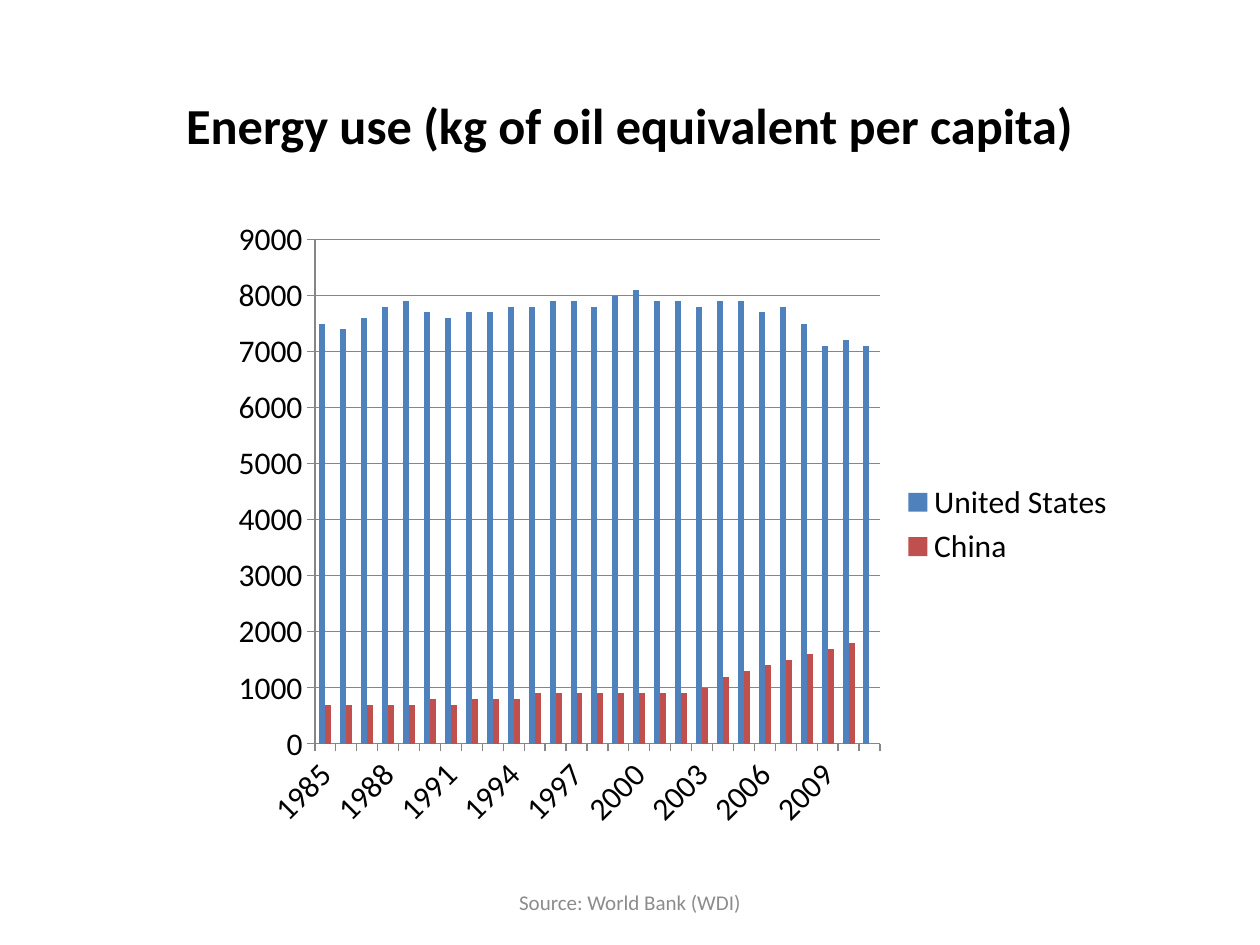
from dataclasses import dataclass

from pptx import Presentation
from pptx import util as u
from pptx.chart.data import CategoryChartData
from pptx.dml.color import RGBColor
from pptx.enum import chart as charts
from pptx.enum import text


@dataclass(frozen=True)
class Theme:
    font: str = "Calibri"
    ink: str = "000000"
    muted: str = "8C8C8C"
    axis: str = "868686"
    series: tuple = ("4F81BD", "C0504D")
    title_size: float = 28.8
    chart_size: float = 18
    source_size: float = 12


def apply(target, formats):
    for name, value in formats.items():
        setattr(target, name, value)


class SlideBuilder:
    def __init__(self, deck, theme):
        self.deck = deck
        self.theme = theme
        self.slide = deck.slides.add_slide(deck.slide_layouts[5])

    def box(self, left, top, width, height):
        across, down = self.deck.slide_width, self.deck.slide_height
        return (int(left * across), int(top * down),
                int(width * across), int(height * down))

    def style_font(self, font, size, color, bold=False):
        apply(font, {"name": self.theme.font, "size": u.Pt(size), "bold": bold})
        font.color.rgb = RGBColor.from_string(color)

    def fill_frame(self, frame, wording, size, color, bold=False, **formats):
        apply(frame, {"word_wrap": True, "auto_size": text.MSO_AUTO_SIZE.NONE, **formats})
        paragraph = frame.paragraphs[0]
        paragraph.alignment = text.PP_ALIGN.CENTER
        run = paragraph.add_run()
        run.text = wording
        self.style_font(run.font, size, color, bold)

    def title(self, wording, place):
        heading = self.slide.shapes.title
        apply(heading, dict(zip(("left", "top", "width", "height"), self.box(*place))))
        self.fill_frame(heading.text_frame, wording, self.theme.title_size, self.theme.ink,
                        bold=True, vertical_anchor=text.MSO_ANCHOR.TOP,
                        margin_top=u.Inches(0.45), margin_bottom=0)

    def source(self, wording, place):
        credit = self.slide.shapes.add_textbox(*self.box(*place))
        self.fill_frame(credit.text_frame, wording, self.theme.source_size, self.theme.muted,
                        vertical_anchor=text.MSO_ANCHOR.MIDDLE)

    def columns(self, years, countries, place):
        data = CategoryChartData()
        data.categories = years
        for country, values in countries.items():
            data.add_series(country, values)
        energy = self.slide.shapes.add_chart(
            charts.XL_CHART_TYPE.COLUMN_CLUSTERED, *self.box(*place), data).chart
        apply(energy, {"has_title": False, "has_legend": True})
        apply(energy.legend, {"position": charts.XL_LEGEND_POSITION.RIGHT,
                              "include_in_layout": False})
        self.style_font(energy.font, self.theme.chart_size, self.theme.ink)
        apply(energy.plots[0], {"gap_width": 150, "overlap": 0, "vary_by_categories": False})
        for series, color in zip(energy.plots[0].series, self.theme.series):
            series.format.fill.solid()
            series.format.fill.fore_color.rgb = RGBColor.from_string(color)
        apply(energy.value_axis, {"minimum_scale": 0, "maximum_scale": 9000,
                                  "major_unit": 1000, "has_major_gridlines": True})
        for axis in (energy.category_axis, energy.value_axis):
            axis.major_tick_mark = charts.XL_TICK_MARK.OUTSIDE
        for rule in (energy.category_axis, energy.value_axis, energy.value_axis.major_gridlines):
            rule.format.line.width = u.Pt(0.75)
            rule.format.line.color.rgb = RGBColor.from_string(self.theme.axis)


YEARS = [str(year) for year in range(1985, 2012)]
ENERGY_USE = {
    "United States": [7500, 7400, 7600, 7800, 7900, 7700, 7600, 7700, 7700,
                      7800, 7800, 7900, 7900, 7800, 8000, 8100, 7900, 7900,
                      7800, 7900, 7900, 7700, 7800, 7500, 7100, 7200, 7100],
    "China": [700, 700, 700, 700, 700, 800, 700, 800, 800,
              800, 900, 900, 900, 900, 900, 900, 900, 900,
              1000, 1200, 1300, 1400, 1500, 1600, 1700, 1800, None],
}


def main():
    deck = Presentation()
    apply(deck, {"slide_width": u.Inches(10), "slide_height": u.Inches(7.5)})
    page = SlideBuilder(deck, Theme())
    page.title("Energy use (kg of oil equivalent per capita)", (0.05, 0.04, 0.9, 0.12))
    page.columns(YEARS, ENERGY_USE, (0.175, 0.22, 0.72, 0.67))
    page.source("Source: World Bank (WDI)", (0.34, 0.93, 0.32, 0.05))
    deck.save("out.pptx")


if __name__ == "__main__":
    main()
